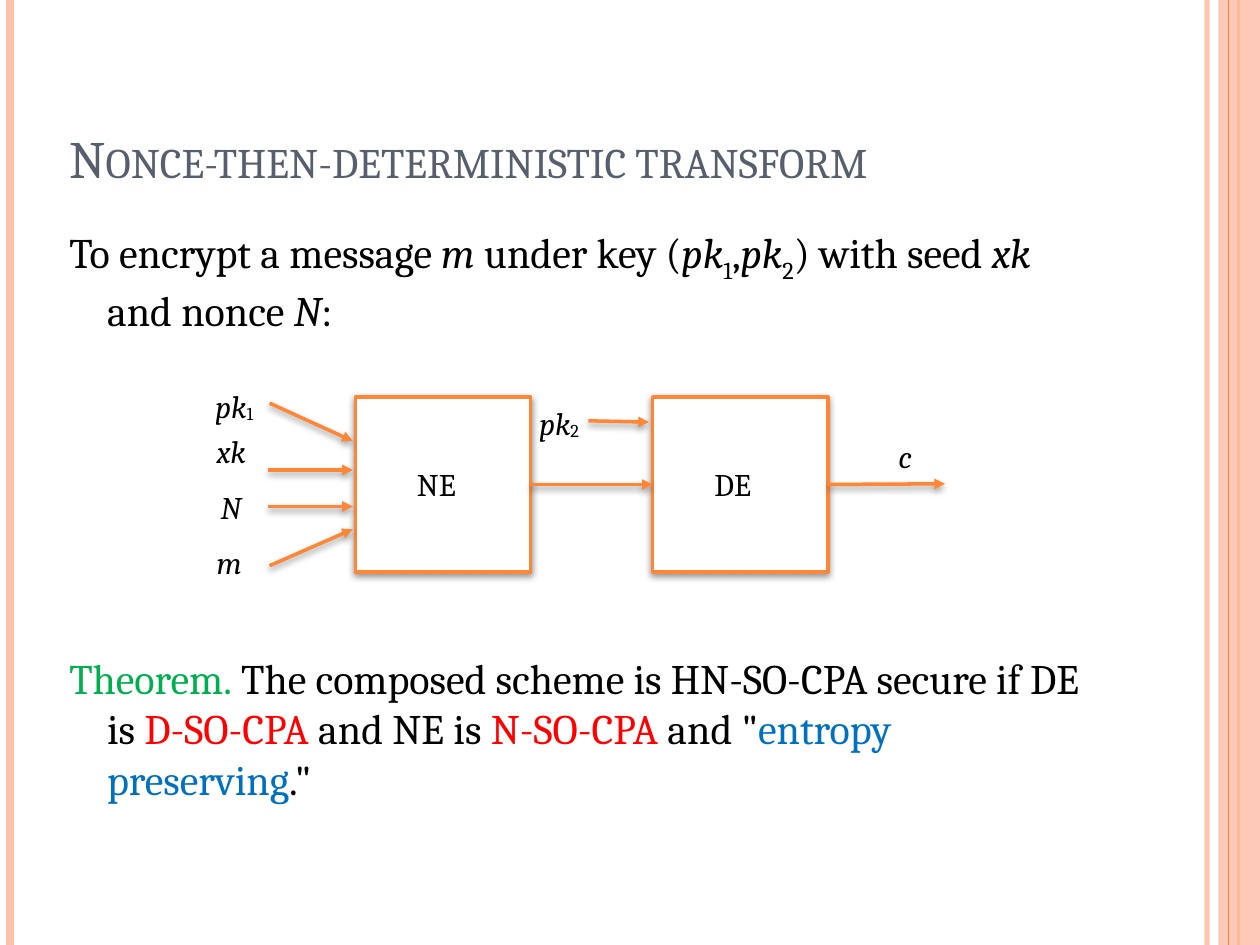
from lxml import etree
from pptx import Presentation
from pptx import util as u
from pptx.dml.color import RGBColor
from pptx.enum import shapes, text
from pptx.oxml import ns

ORANGE = RGBColor(0xFE, 0x86, 0x37)
PEACH = RGBColor(0xFE, 0xC2, 0xAC)
SLATE = RGBColor(0x57, 0x5F, 0x6D)
WHITE = RGBColor(0xFF, 0xFF, 0xFF)
BLACK = RGBColor(0, 0, 0)
GREEN = RGBColor(0, 0xB0, 0x50)
RED = RGBColor(0xFF, 0, 0)
BLUE = RGBColor(0, 0x70, 0xC0)

deck = Presentation()
deck.slide_width, deck.slide_height = u.Inches(10), u.Inches(7.5)
COLUMN = deck.slide_width / 100
ROW = deck.slide_height / 75
page = deck.slides.add_slide(deck.slide_layouts[6])


def write(left, top, width, height, spans, size=18, wrap=False, hanging=0, before=0,
          anchor=text.MSO_ANCHOR.TOP):
    box = page.shapes.add_textbox(int(left * COLUMN), int(top * ROW),
                                  int(width * COLUMN), int(height * ROW))
    frame = box.text_frame
    frame.word_wrap = wrap
    frame.vertical_anchor = anchor
    frame.margin_left = frame.margin_right = u.Inches(0.05)
    frame.margin_top = frame.margin_bottom = u.Inches(0.05)
    para = frame.paragraphs[0]
    para.space_before = u.Pt(before)
    if hanging:
        properties = para._p.get_or_add_pPr()
        properties.set("marL", str(int(hanging * COLUMN)))
        properties.set("indent", str(int(-hanging * COLUMN)))
    for words, style in spans:
        span = para.add_run()
        span.text = words
        span.font.name = "Cambria"
        span.font.size = u.Pt(size)
        span.font.italic = style.get("italic", False)
        span.font.color.rgb = style.get("color", BLACK)
        for name in ("baseline", "cap"):
            if name in style:
                span._r.get_or_add_rPr().set(name, style[name])


def add_effects(piece, opacity=0, distance=0):
    effects = etree.SubElement(piece.element.spPr, ns.qn("a:effectLst"))
    if opacity:
        shadow = etree.SubElement(effects, ns.qn("a:outerShdw"), blurRad=str(u.Pt(4)),
                                  dist=str(u.Pt(distance)), dir="5400000", rotWithShape="0")
        color = etree.SubElement(shadow, ns.qn("a:srgbClr"), val="000000")
        etree.SubElement(color, ns.qn("a:alpha"), val=str(opacity * 1000))


rules = []
for column, color, weight in ((95.8, PEACH, 3), (0.8, PEACH, 4.5),
                              (98.3, ORANGE, 1.5), (97.5, ORANGE, 0.75)):
    x = int(column * COLUMN)
    rule = page.shapes.add_connector(shapes.MSO_CONNECTOR.STRAIGHT, x, 0, x, deck.slide_height)
    rule.line.color.rgb = color
    rule.line.width = u.Pt(weight)
    add_effects(rule)
    rules.append(rule)

band = page.shapes.add_shape(shapes.MSO_SHAPE.RECTANGLE, int(96.7 * COLUMN), 0,
                             int(3.3 * COLUMN), deck.slide_height)
band.shadow.inherit = False
band.fill.solid()
band.fill.fore_color.rgb = PEACH
band.line.fill.background()
rules[-1].element.addprevious(band.element)

for piece, opacity in ((rules[0], 93), (band, 87)):
    color = next(piece.element.spPr.iter(ns.qn("a:srgbClr")))
    etree.SubElement(color, ns.qn("a:alpha"), val=str(opacity * 1000))

ITALIC = {"italic": True}
PLAIN = {}
SUBSCRIPT = {"baseline": "-25000"}
INDEX = {"baseline": "-6000"}

write(5, 3, 81.7, 12.5, [("Nonce-then-deterministic transform", {"color": SLATE, "cap": "small"})],
      size=30, wrap=True, anchor=text.MSO_ANCHOR.BOTTOM)
write(5, 17.5, 81.7, 12, [
    ("To encrypt a message ", PLAIN), ("m ", ITALIC), ("under key (", PLAIN),
    ("pk", ITALIC), ("1", SUBSCRIPT), (",", PLAIN), ("pk", ITALIC), ("2", SUBSCRIPT),
    (") with seed ", PLAIN), ("xk", ITALIC), (" and nonce ", PLAIN), ("N", ITALIC), (":", PLAIN),
], size=24, wrap=True, hanging=3, before=6)

stages = []
for name, left in (("NE", 28.2), ("DE", 51.8)):
    stage = page.shapes.add_shape(shapes.MSO_SHAPE.RECTANGLE, int(left * COLUMN), int(31.5 * ROW),
                                  int(13.9 * COLUMN), int(13.9 * ROW))
    stage.fill.solid()
    stage.fill.fore_color.rgb = WHITE
    stage.line.color.rgb = ORANGE
    stage.line.width = u.Pt(2)
    add_effects(stage, 42, 1.6)
    stages.append(stage)
    write(left + 4.4, 36.4, 5, 4.1, [(name, PLAIN)])

encoder, encryptor = stages
for x1, y1, x2, y2, source, target in (
    (21.4, 32, 28, 35, None, None),
    (21.3, 37.3, 28, 37.3, None, None),
    (21.3, 40.2, 28, 40.2, None, None),
    (21.4, 44.9, 28, 42, None, None),
    (46.7, 33.4, 51.5, 33.5, None, None),
    (42.1, 38.4, 51.8, 38.4, encoder, encryptor),
    (65.7, 38.4, 75, 38.4, encryptor, None),
):
    arrow = page.shapes.add_connector(shapes.MSO_CONNECTOR.STRAIGHT, int(x1 * COLUMN),
                                      int(y1 * ROW), int(x2 * COLUMN), int(y2 * ROW))
    if source:
        arrow.begin_connect(source, 3)
    if target:
        arrow.end_connect(target, 1)
    arrow.line.color.rgb = ORANGE
    arrow.line.width = u.Pt(2)
    etree.SubElement(arrow.line._get_or_add_ln(), ns.qn("a:tailEnd"), type="triangle")
    add_effects(arrow, 40, 2)

for left, top, width, name, index in (
    (16.6, 30.2, 4.9, "pk", "1"),
    (16.7, 33.8, 3.8, "xk", ""),
    (17, 38.2, 3.2, "N", ""),
    (16.7, 42.6, 3.4, "m", ""),
    (42.3, 31.6, 4.9, "pk", "2"),
    (70.8, 34.2, 2.2, "c", ""),
):
    write(left, top, width, 4.1, [(name, ITALIC)] + ([(index, INDEX)] if index else []))

write(5, 51.3, 81.7, 14, [
    ("Theorem.", {"color": GREEN}),
    (" The composed scheme is HN-SO-CPA secure if DE is ", PLAIN),
    ("D-SO-CPA ", {"color": RED}), ("and NE is", PLAIN), (" N-SO-CPA ", {"color": RED}),
    ('and "', PLAIN), ("entropy preserving", {"color": BLUE}), ('."', PLAIN),
], size=24, wrap=True, hanging=3, before=6)

deck.save("out.pptx")
